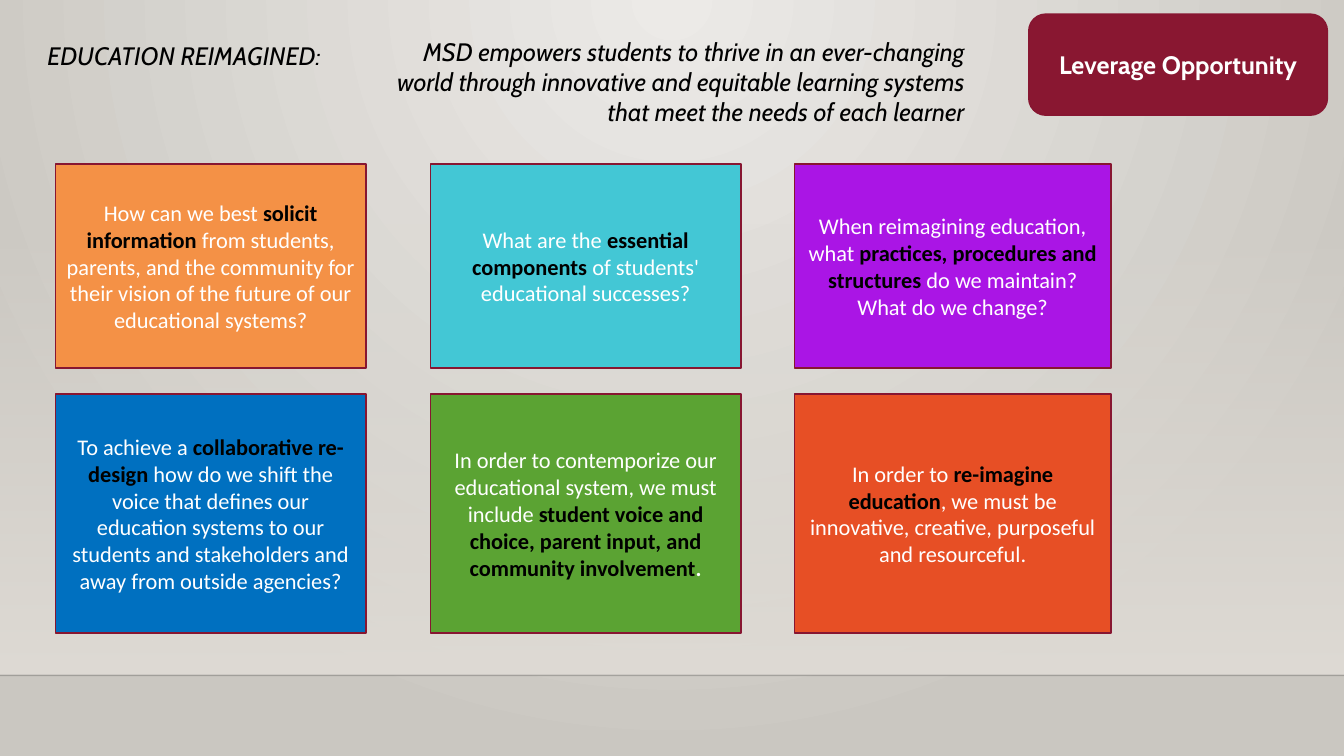
"""Build the Education Reimagined slide with six question cards."""
from lxml import etree
from pptx import Presentation
from pptx.dml.color import RGBColor
from pptx.enum import shapes, text
from pptx.oxml import ns
from pptx.util import Cm, Pt

COLOURS = {
    "black": "000000", "white": "FFFFFF", "maroon": "891731", "border": "871631",
    "light": "ECEAE7", "shade": "CAC7C1", "panel": "DFDBD5", "horizon": "000001",
    "orange": "F49146", "teal": "43C7D5", "purple": "AA15E5",
    "blue": "0070C0", "green": "5BA333", "red": "E74F25",
}
COLUMNS = [(1.4, 7.82), (10.85, 7.82), (20.02, 7.98)]
ROWS = [(4.14, 5.13), (9.93, 6.02)]
CARDS = [
    ("orange", "How can we best ", "solicit information",
     " from students, parents, and the community for their vision of the future of our educational systems?"),
    ("teal", "What are the ", "essential components", " of students' educational successes?"),
    ("purple", "When reimagining education, what ", "practices, procedures and structures ",
     "do we maintain? What do we change?"),
    ("blue", "To achieve a ", "collaborative re-design ",
     "how do we shift the voice that defines our education systems to our students and stakeholders"
     " and away from outside agencies?"),
    ("green", "In order to contemporize our educational system, we must include ",
     "student voice and choice, parent input, and community involvement", "."),
    ("red", "In order to ", "re-imagine education",
     ", we must be innovative, creative, purposeful and resourceful."),
]
HEADING = {"name": "Cabin", "size": Pt(18), "bold": False, "italic": True}
LABEL = {"name": "Cabin", "size": Pt(18), "bold": True}
PLAIN = {"name": "Calibri", "size": Pt(16), "bold": False}
STRONG = {**PLAIN, "bold": True}


def write(box, align, anchor, spans):
    """Fill a box with one paragraph of formatted spans."""
    frame = box.text_frame
    frame.word_wrap = True
    frame.vertical_anchor = anchor
    para = frame.paragraphs[0]
    para.alignment = align
    for words, colour, values in spans:
        span = para.add_run()
        span.text = words
        span.font.color.rgb = RGBColor.from_string(COLOURS[colour])
        for name, value in values.items():
            setattr(span.font, name, value)


def add_block(kind, place, colour):
    """Add a filled shape with the thin maroon border."""
    block = page.shapes.add_shape(kind, *map(Cm, place))
    block.shadow.inherit = False
    block.fill.solid()
    block.fill.fore_color.rgb = RGBColor.from_string(COLOURS[colour])
    block.line.color.rgb = RGBColor.from_string(COLOURS["border"])
    block.line.width = Pt(1.25)
    return block


deck = Presentation()
deck.slide_width, deck.slide_height = Cm(33.87), Cm(19.05)
page = deck.slides.add_slide(deck.slide_layouts[5])

backdrop = page.background.fill
backdrop.gradient()
for stop, colour in zip(backdrop.gradient_stops, ("light", "shade")):
    stop.color.rgb = RGBColor.from_string(COLOURS[colour])
linear = page._element.xpath("./p:cSld/p:bg//a:lin")[0]
circle = etree.Element(ns.qn("a:path"), path="circle")
etree.SubElement(circle, ns.qn("a:fillToRect"), l="43000", t="0", r="43000", b="100000")
linear.getparent().replace(linear, circle)

panel = page.shapes.add_shape(shapes.MSO_SHAPE.RECTANGLE, 0, Cm(5.61), deck.slide_width, Cm(11.4))
panel.shadow.inherit = False
panel.line.fill.background()
panel.fill.gradient()
panel.fill.gradient_angle = 270
for stop in panel.fill.gradient_stops:
    stop.color.rgb = RGBColor.from_string(COLOURS["panel"])
clear = panel._element.xpath(".//a:gs/a:srgbClr")[0]
etree.SubElement(clear, ns.qn("a:alpha"), val="0")

horizon = page.shapes.add_connector(
    shapes.MSO_CONNECTOR.STRAIGHT, 0, Cm(17.02), deck.slide_width, Cm(17.02))
horizon.line.color.rgb = RGBColor.from_string(COLOURS["horizon"])
horizon.line.width = Pt(1)
etree.SubElement(horizon._element.xpath(".//a:ln//a:srgbClr")[0], ns.qn("a:alpha"), val="20000")
etree.SubElement(horizon._element.spPr, ns.qn("a:effectLst"))

title = page.shapes.title
title.left, title.top, title.width, title.height = map(Cm, (0.94, 0.89, 9.02, 1.02))
write(title, text.PP_ALIGN.LEFT, text.MSO_ANCHOR.TOP,
      [("EDUCATION REIMAGINED:", "black", HEADING)])

mission = page.shapes.add_textbox(*map(Cm, (9.19, 0.79, 15.37, 3.33)))
write(mission, text.PP_ALIGN.RIGHT, text.MSO_ANCHOR.TOP,
      [("MSD empowers students to thrive in an ever-changing world through innovative and "
        "equitable learning systems that meet the needs of each learner", "black", HEADING)])

badge = add_block(shapes.MSO_SHAPE.ROUNDED_RECTANGLE, (25.93, 0.36, 7.52, 2.54), "maroon")
write(badge, text.PP_ALIGN.CENTER, text.MSO_ANCHOR.MIDDLE,
      [("Leverage Opportunity", "white", LABEL)])

for index, (colour, opening, emphasis, ending) in enumerate(CARDS):
    top, height = ROWS[index // len(COLUMNS)]
    left, width = COLUMNS[index % len(COLUMNS)]
    card = add_block(shapes.MSO_SHAPE.RECTANGLE, (left, top, width, height), colour)
    ending_style = STRONG if ending == "." else PLAIN
    write(card, text.PP_ALIGN.CENTER, text.MSO_ANCHOR.MIDDLE,
          [(opening, "white", PLAIN), (emphasis, "black", STRONG), (ending, "white", ending_style)])

deck.save("out.pptx")
